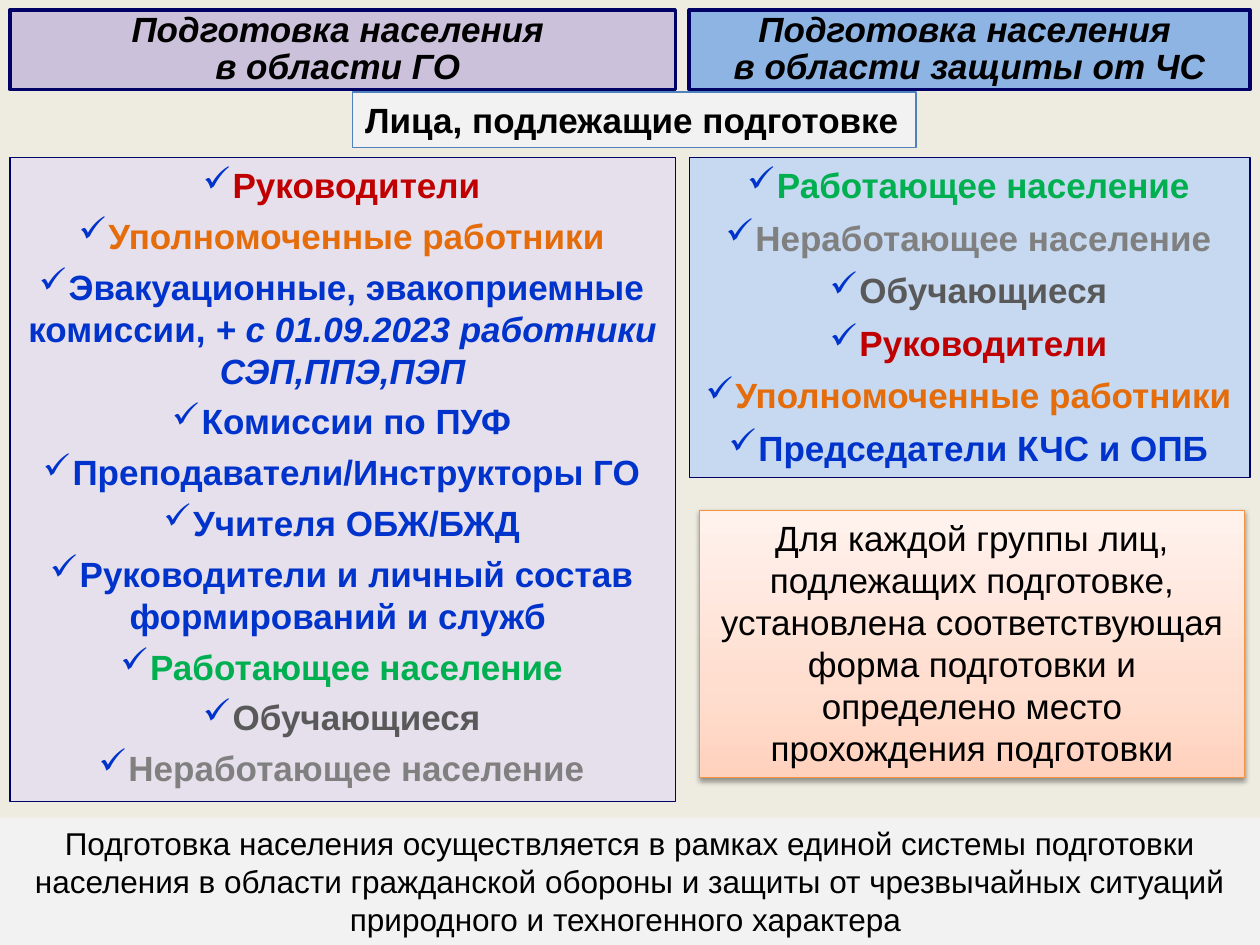
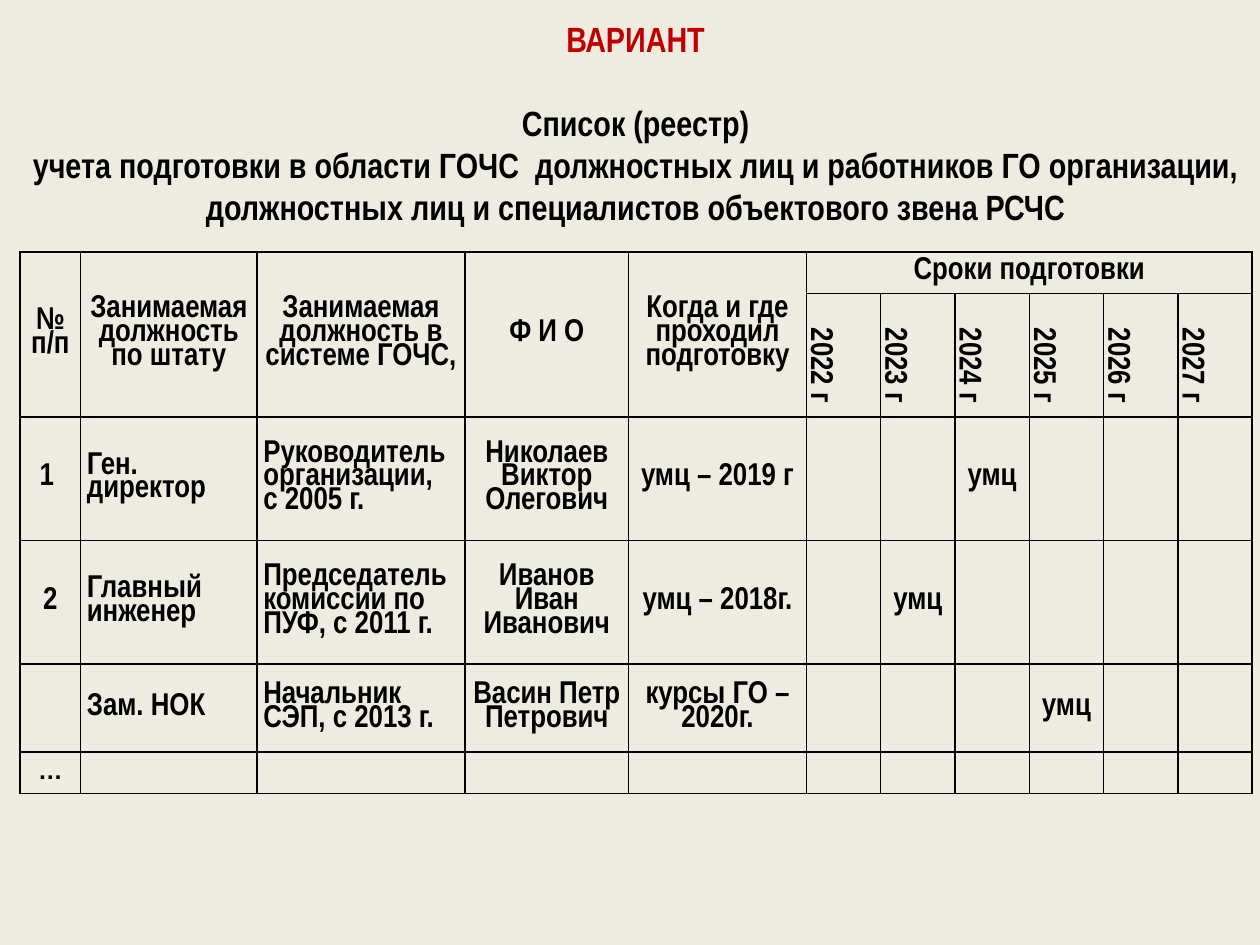
from copy import deepcopy
from dataclasses import dataclass, field

from lxml.etree import SubElement
from pptx import Presentation
from pptx.dml.color import RGBColor
from pptx.enum.shapes import MSO_SHAPE
from pptx.enum.text import MSO_ANCHOR, MSO_AUTO_SIZE, PP_ALIGN
from pptx.oxml.ns import qn
from pptx.util import Emu, Pt

# Shared look
PX = 9144  # one px is a hundredth of an inch
PAGE = "EEECE1"
BLACK, NAVY, BLUE, RED = "000000", "000066", "0033CC", "C00000"
ORANGE, GREEN, DARK_GREY, GREY = "E46C0A", "00B050", "595959", "808080"
PALE = "F2F2F2"
CENTER = {"alignment": PP_ALIGN.CENTER}
LEFT = {"alignment": PP_ALIGN.LEFT}
PLAIN = {"name": "Arial", "size": Pt(20)}
BOLD = PLAIN | {"bold": True}
HEADING = BOLD | {"italic": True}
NARROW = BOLD | {"name": "Arial Narrow"}


@dataclass
class Span:
    text: str
    color: str = BLACK
    font: dict = field(default_factory=lambda: PLAIN)


@dataclass
class Para:
    spans: list[Span]
    layout: dict = field(default_factory=lambda: CENTER)
    bullet: bool = False


@dataclass
class Box:
    left: int
    top: int
    width: int
    height: int
    paras: list[Para]
    fill: str | None = None
    line: str | None = None
    weight: float = 0.75
    frame: dict = field(default_factory=dict)


@dataclass
class Entry:
    """One table cell: its lines and their look."""
    lines: tuple[str, ...] = ()
    layout: dict = field(default_factory=lambda: CENTER)
    font: dict = field(default_factory=lambda: NARROW | {"size": Pt(18)})
    upright: bool = False


def px(length: int) -> Emu:
    return Emu(length * PX)


def rgb(color: str) -> RGBColor:
    return RGBColor.from_string(color)


def apply(target, values: dict) -> None:
    for name, value in values.items():
        setattr(target, name, value)


def add_bullet(para) -> None:
    properties = para._p.get_or_add_pPr()
    color = SubElement(properties, qn("a:buClr"))
    SubElement(color, qn("a:srgbClr"), val=BLUE)
    SubElement(properties, qn("a:buChar"), char="✓")


def write(frame, paras: list[Para]) -> None:
    for index, item in enumerate(paras):
        para = frame.add_paragraph() if index else frame.paragraphs[0]
        apply(para, item.layout)
        if item.bullet:
            add_bullet(para)
        for span in item.spans:
            run = para.add_run()
            run.text = span.text
            apply(run.font, span.font)
            run.font.color.rgb = rgb(span.color)


def draw_box(page, box: Box):
    place = [px(n) for n in (box.left, box.top, box.width, box.height)]
    if box.fill:
        shape = page.shapes.add_shape(MSO_SHAPE.RECTANGLE, *place)
        shape.shadow.inherit = False
        shape.fill.solid()
        shape.fill.fore_color.rgb = rgb(box.fill)
        if box.line:
            shape.line.color.rgb = rgb(box.line)
            shape.line.width = Pt(box.weight)
        else:
            shape.line.fill.background()
    else:
        shape = page.shapes.add_textbox(*place)
    growing = {"word_wrap": True, "vertical_anchor": MSO_ANCHOR.TOP,
               "auto_size": MSO_AUTO_SIZE.SHAPE_TO_FIT_TEXT}
    apply(shape.text_frame, growing | box.frame)
    write(shape.text_frame, box.paras)
    return shape


def add_gradient(shape, stops: list[tuple[float, str]]) -> None:
    shape.fill.gradient()
    shape.fill.gradient_angle = 90
    stop_list = shape._element.spPr.find(qn("a:gradFill")).find(qn("a:gsLst"))
    stop_list.append(deepcopy(stop_list[0]))
    for stop, (position, color) in zip(shape.fill.gradient_stops, stops):
        stop.position = position
        stop.color.rgb = rgb(color)


def add_shadow(shape) -> None:
    effects = shape._element.spPr.find(qn("a:effectLst"))
    shadow = SubElement(effects, qn("a:outerShdw"), blurRad=str(Pt(3.1)),
                        dist=str(Pt(1.6)), dir="5400000", rotWithShape="0")
    color = SubElement(shadow, qn("a:srgbClr"), val=BLACK)
    SubElement(color, qn("a:alpha"), val="38000")


def new_page(deck):
    page = deck.slides.add_slide(deck.slide_layouts[6])
    page.background.fill.solid()
    page.background.fill.fore_color.rgb = rgb(PAGE)
    return page


# Slide 1: who is to be trained
def checklist(items: list[tuple[str, str]], gap: int) -> list[Para]:
    layout = CENTER | {"space_after": Pt(gap)}
    return [Para([Span(text, color, BOLD)], layout, True) for text, color in items]


def heading(left: int, width: int, fill: str, second_line: str) -> Box:
    layout = CENTER | {"line_spacing": 0.9}
    paras = [Para([Span(text, BLACK, HEADING)], layout)
             for text in ("Подготовка населения ", second_line)]
    frame = {"vertical_anchor": MSO_ANCHOR.MIDDLE, "auto_size": MSO_AUTO_SIZE.NONE}
    return Box(left, 8, width, 63, paras, fill, NAVY, 2, frame)


def build_groups(deck) -> None:
    page = new_page(deck)
    defence = checklist([
        ("Руководители", RED),
        ("Уполномоченные работники", ORANGE),
        ("Эвакуационные, эвакоприемные комиссии, ", BLUE),
        ("Комиссии по ПУФ", BLUE),
        ("Преподаватели/Инструкторы ГО", BLUE),
        ("Учителя ОБЖ/БЖД", BLUE),
        ("Руководители и личный состав формирований и служб ", BLUE),
        ("Работающее население", GREEN),
        ("Обучающиеся", DARK_GREY),
        ("Неработающее население", GREY)], 5)
    defence[2].spans.append(
        Span("+ с 01.09.2023 работники СЭП,ППЭ,ПЭП", BLUE, HEADING))
    emergency = checklist([
        ("Работающее население", GREEN),
        ("Неработающее население", GREY),
        ("Обучающиеся", DARK_GREY),
        ("Руководители", RED),
        ("Уполномоченные работники", ORANGE),
        ("Председатели КЧС и ОПБ", BLUE)], 6)
    system = ("Подготовка населения осуществляется в рамках единой системы подготовки "
              "населения в области гражданской обороны и защиты от чрезвычайных "
              "ситуаций природного и техногенного характера ")
    for box in (
        Box(8, 125, 528, 511, defence, "E6E0EC", NAVY),
        Box(547, 125, 445, 254, emergency, "C6D9F1", NAVY),
        heading(547, 445, "8EB4E3", "в области защиты от ЧС"),
        heading(8, 528, "CCC1DA", "в области ГО "),
        Box(280, 73, 447, 44,
            [Para([Span("Лица, подлежащие подготовке", BLACK, BOLD)], LEFT)],
            PALE, "4F81BD", frame={"word_wrap": False}),
        Box(0, 649, 1000, 101,
            [Para([Span(system, BLACK, PLAIN | {"size": Pt(18)})])], PALE),
    ):
        draw_box(page, box)

    # Shaded note
    note = draw_box(page, Box(555, 405, 433, 212, [Para([Span(
        "Для каждой группы лиц, подлежащих подготовке, установлена соответствующая "
        "форма подготовки и определено место прохождения подготовки")])],
        "FFDED0", "F69240"))
    add_gradient(note, [(0, "FFD2BD"), (0.35, "FFDED0"), (1, "FFF2ED")])
    add_shadow(note)


# Slide 2: training register
COLUMNS = [48, 140, 165, 130, 141] + [59] * 6
ROWS = [33, 98, 98, 98, 70, 33]
FIRST_YEAR = 5  # column of the first year
HEADERS = [("№", "п/п"), ("Занимаемая должность по штату",),
           ("Занимаемая должность в системе ГОЧС, ",), ("Ф И О",),
           ("Когда и где проходил подготовку",), ("Сроки подготовки",)]
PEOPLE = [  # number, post, role, name, last training, year of the next one
    ("1 ", "Ген. директор", "Руководитель организации,\nс 2005 г.",
     "Николаев Виктор Олегович", "умц – 2019 г", 2024),
    ("2", "Главный инженер", "Председатель комиссии по ПУФ, с 2011 г.",
     "Иванов Иван Иванович", "умц – 2018г.", 2023),
    ("", "Зам. НОК", "Начальник СЭП, с 2013 г.",
     "Васин Петр Петрович", "курсы ГО – 2020г.", 2025)]


def register_entries() -> dict[tuple[int, int], Entry]:
    entries = {(0, column): Entry(lines) for column, lines in enumerate(HEADERS)}
    for offset in range(6):
        entries[1, FIRST_YEAR + offset] = Entry((f"{2022 + offset} г",), LEFT, upright=True)
    for row, (*texts, year) in enumerate(PEOPLE, 2):
        for column, text in enumerate(texts):
            if text:
                layout = LEFT if column in (1, 2) else CENTER
                entries[row, column] = Entry(tuple(text.split("\n")), layout)
        entries[row, FIRST_YEAR + year - 2022] = Entry(("умц",))
    entries[5, 0] = Entry(("…",), font=BOLD | {"size": Pt(14)})
    return entries


def fill_cell(cell, entry: Entry) -> None:
    apply(cell, {"margin_left": px(5), "margin_right": px(5), "margin_top": 0,
                 "margin_bottom": 0, "vertical_anchor": MSO_ANCHOR.MIDDLE})
    properties = cell._tc.get_or_add_tcPr()
    for side in ("lnL", "lnR", "lnT", "lnB"):
        border = SubElement(properties, qn(f"a:{side}"), w=str(Pt(1)))
        SubElement(SubElement(border, qn("a:solidFill")), qn("a:srgbClr"), val=BLACK)
    cell.fill.background()
    layout = entry.layout | {"line_spacing": 0.8}
    write(cell.text_frame,
          [Para([Span(line, BLACK, entry.font)], layout) for line in entry.lines])
    if entry.upright:
        properties.set("vert", "vert")
        cell.text_frame.paragraphs[0]._p.get_or_add_pPr().set("marL", str(Pt(16)))
    if not entry.lines:
        SubElement(cell.text_frame.paragraphs[0]._p, qn("a:endParaRPr"), sz="1400")


def build_register(deck) -> None:
    page = new_page(deck)
    table = page.shapes.add_table(len(ROWS), len(COLUMNS), px(16), px(200),
                                  px(sum(COLUMNS)), px(sum(ROWS))).table
    apply(table, {"first_row": False, "horz_banding": False})
    for column, width in zip(table.columns, COLUMNS):
        column.width = px(width)
    for row, height in zip(table.rows, ROWS):
        row.height = px(height)
    entries = register_entries()
    for row in range(len(ROWS)):
        for column in range(len(COLUMNS)):
            fill_cell(table.cell(row, column), entries.get((row, column), Entry()))
    for column in range(FIRST_YEAR):
        table.cell(0, column).merge(table.cell(1, column))
    table.cell(0, FIRST_YEAR).merge(table.cell(0, len(COLUMNS) - 1))

    # Title
    subject = ("учета подготовки в области ГОЧС  должностных лиц и работников ГО "
               "организации, должностных лиц и специалистов объектового звена РСЧС")
    draw_box(page, Box(16, 8, 977, 178, [
        Para([Span("ВАРИАНТ", RED, NARROW)]),
        Para([Span("Список (реестр)", BLACK, NARROW)], CENTER | {"space_before": Pt(24)}),
        Para([Span(subject, BLACK, NARROW)]),
    ], frame={"vertical_anchor": MSO_ANCHOR.MIDDLE}))


def main() -> None:
    deck = Presentation()
    deck.slide_width, deck.slide_height = px(1000), px(750)
    build_groups(deck)
    build_register(deck)
    deck.save("out.pptx")


if __name__ == "__main__":
    main()
